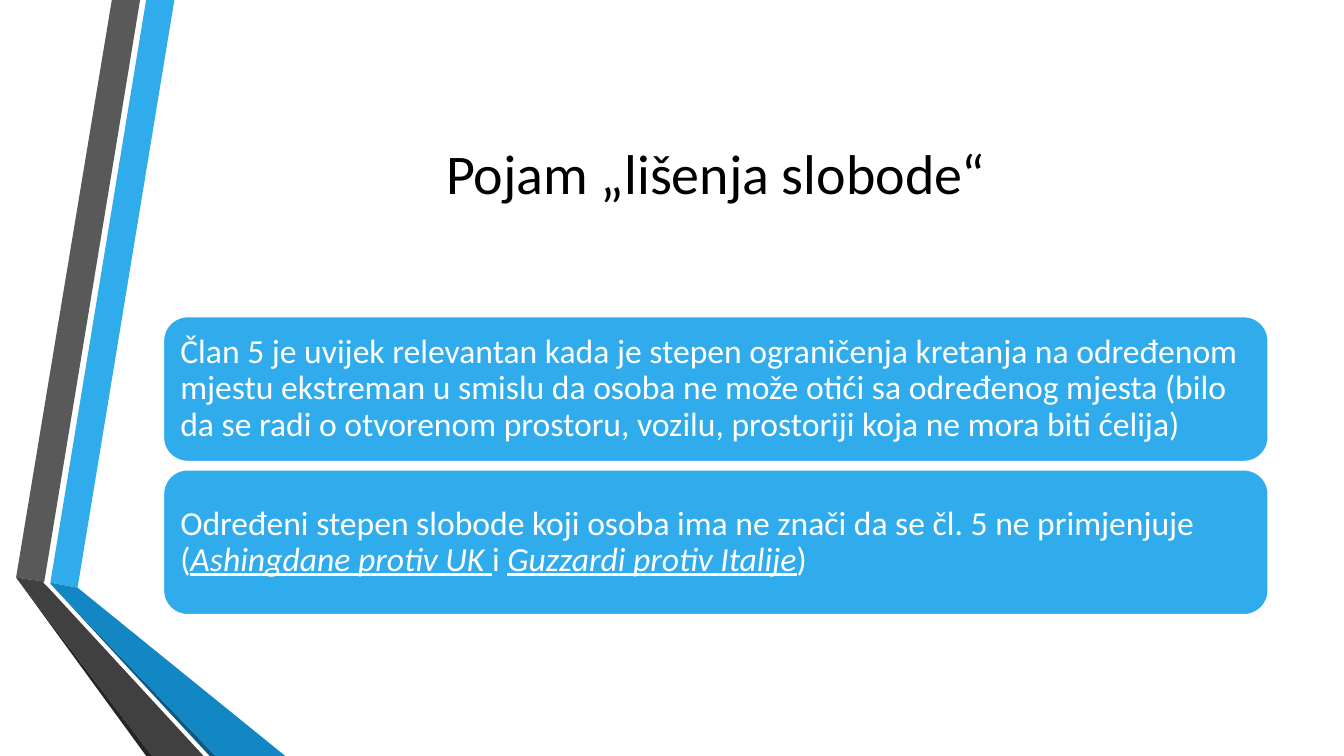
from dataclasses import dataclass

from pptx import Presentation
from pptx import util as u
from pptx.dml.color import RGBColor
from pptx.enum import shapes, text


@dataclass(frozen=True)
class Theme:
    font: str = "Calibri"
    title_size: int = 40
    body_size: int = 24
    line_width: float = 1.25
    ink: str = "000000"
    white: str = "FFFFFF"
    blue: str = "30ACEC"
    blue_mid: str = "1287C3"
    blue_deep: str = "0C5A82"
    gray: str = "595959"
    gray_mid: str = "404040"
    gray_deep: str = "262626"


@dataclass(frozen=True)
class Box:
    left: float
    top: float
    width: float
    height: float

    def emu(self):
        return [u.Inches(n) for n in (self.left, self.top, self.width, self.height)]


THEME = Theme()
PAGE = Box(0, 0, 13.33, 7.5)
TITLE = Box(1.62, 0.75, 10.96, 1.92)
CARDS = Box(1.62, 3.14, 10.96, 2.96)
CARD_GAP = 0.08

RIBBON = [
    (THEME.blue, [(0.5, 5.78), (0.77, 5.83), (1.73, 0), (1.45, 0)]),
    (THEME.gray, [(1.39, 0), (1.11, 0), (0.16, 5.73), (0.44, 5.77)]),
    (THEME.gray_deep, [(0.16, 5.73), (1.45, 7.5), (1.51, 7.5)]),
    (THEME.blue_deep, [(0.5, 5.79), (2.08, 7.5), (2.14, 7.5)]),
    (THEME.blue_mid, [(0.5, 5.78), (0.5, 5.79), (2.14, 7.5), (2.83, 7.5), (0.77, 5.83)]),
    (THEME.gray_mid, [(2.02, 7.5), (0.48, 5.83), (0.43, 5.78), (0.44, 5.77),
                      (0.16, 5.73), (1.51, 7.5)]),
]

# Each card is a list of (wording, is a case name)
CARD_TEXTS = [
    [("Član 5 je uvijek relevantan kada je stepen ograničenja kretanja na određenom "
      "mjestu ekstreman u smislu da osoba ne može otići sa određenog mjesta (bilo da "
      "se radi o otvorenom prostoru, vozilu, prostoriji koja ne mora biti ćelija)", False)],
    [("Određeni stepen slobode koji osoba ima ne znači da se čl. 5 ne primjenjuje (", False),
     ("Ashingdane protiv UK ", True),
     ("i ", False),
     ("Guzzardi protiv Italije", True),
     (")", False)],
]


def paint(shape, color):
    shape.shadow.inherit = False
    shape.fill.solid()
    shape.fill.fore_color.rgb = RGBColor.from_string(color)


def prepare_frame(shape):
    """Wrap and centre the text vertically; return the first paragraph."""
    frame = shape.text_frame
    frame.word_wrap = True
    frame.vertical_anchor = text.MSO_ANCHOR.MIDDLE
    frame.margin_left = frame.margin_right = u.Inches(0.1)
    frame.margin_top = frame.margin_bottom = u.Inches(0.1)
    return frame.paragraphs[0]


def add_span(para, words, size, color, case_name=False):
    span = para.add_run()
    span.text = words
    font = span.font
    font.name = THEME.font
    font.size = u.Pt(size)
    font.color.rgb = RGBColor.from_string(color)
    if case_name:
        font.italic = font.underline = True


def add_ribbon(page, box):
    """Draw the folded ribbon along the left edge of the box."""
    for color, corners in RIBBON:
        points = [(u.Inches(box.left + x), u.Inches(box.top + y)) for x, y in corners]
        builder = page.shapes.build_freeform(*points[0])
        builder.add_line_segments(points[1:], close=True)
        facet = builder.convert_to_shape()
        paint(facet, color)
        facet.line.fill.background()


def add_title(page, box):
    para = prepare_frame(page.shapes.add_textbox(*box.emu()))
    para.alignment = text.PP_ALIGN.CENTER
    add_span(para, "Pojam „lišenja slobode“", THEME.title_size, THEME.ink)


def add_cards(page, box):
    """Stack equal cards that fill the box."""
    count = len(CARD_TEXTS)
    height = (box.height - CARD_GAP * (count - 1)) / count
    for index, spans in enumerate(CARD_TEXTS):
        place = Box(box.left, box.top + index * (height + CARD_GAP), box.width, height)
        card = page.shapes.add_shape(shapes.MSO_SHAPE.ROUNDED_RECTANGLE, *place.emu())
        paint(card, THEME.blue)
        card.line.color.rgb = RGBColor.from_string(THEME.white)
        card.line.width = u.Pt(THEME.line_width)
        para = prepare_frame(card)
        para.alignment = text.PP_ALIGN.LEFT
        para.line_spacing = 0.9
        for words, case_name in spans:
            add_span(para, words, THEME.body_size, THEME.white, case_name)


def main():
    deck = Presentation()
    deck.slide_width = u.Inches(PAGE.width)
    deck.slide_height = u.Inches(PAGE.height)
    page = deck.slides.add_slide(deck.slide_layouts[6])
    add_ribbon(page, PAGE)
    add_title(page, TITLE)
    add_cards(page, CARDS)
    deck.save("out.pptx")


if __name__ == "__main__":
    main()
